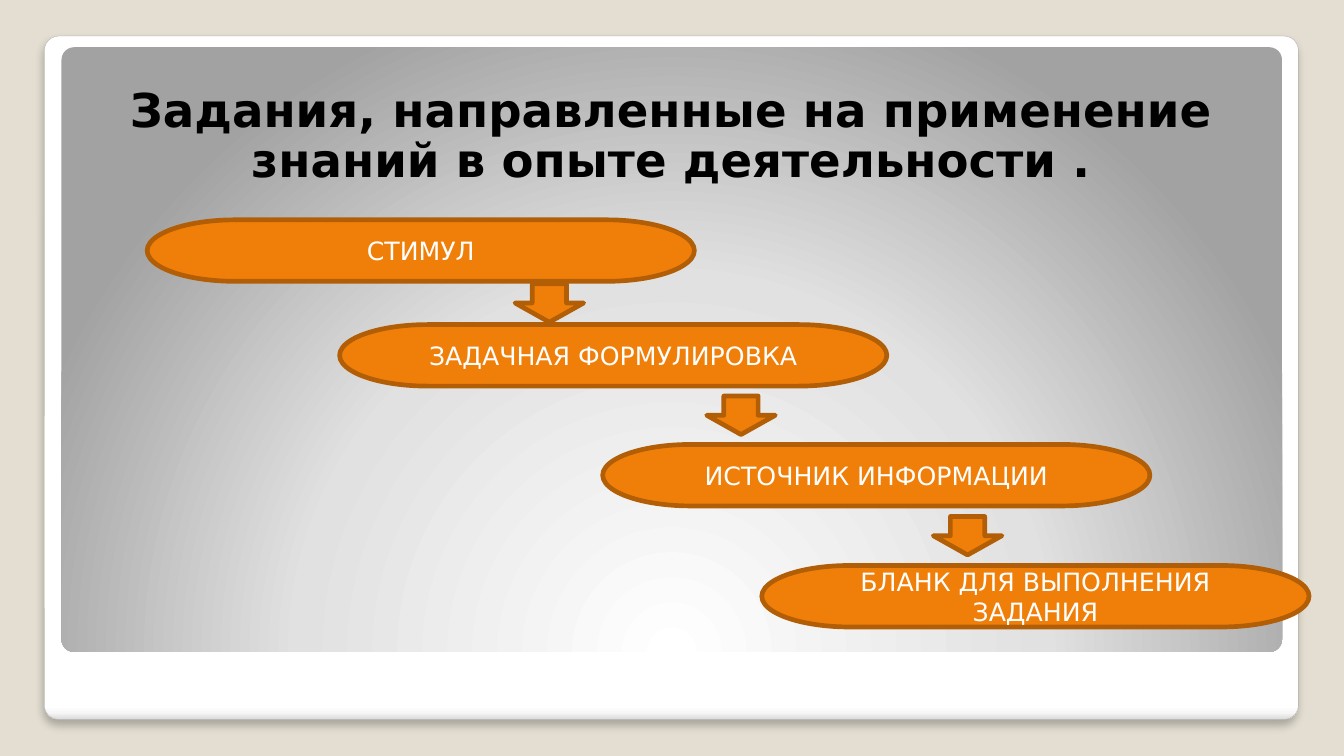
from dataclasses import dataclass

from lxml import etree
from pptx import Presentation
from pptx.dml.color import RGBColor
from pptx.enum.shapes import MSO_SHAPE
from pptx.enum.text import MSO_ANCHOR, PP_ALIGN
from pptx.oxml.ns import qn
from pptx.util import Cm, Pt

ROUNDED = MSO_SHAPE.ROUNDED_RECTANGLE
TERMINATOR = MSO_SHAPE.FLOWCHART_TERMINATOR
DOWN_ARROW = MSO_SHAPE.DOWN_ARROW
MIDDLE = MSO_ANCHOR.MIDDLE
CENTER = PP_ALIGN.CENTER


@dataclass(frozen=True)
class Theme:
    font: str = "DejaVu Sans"
    title_size: float = 33.3
    step_size: float = 18
    outline: float = 3.35
    hairline: float = 0.16
    backdrop: str = "E3DED1"
    card_edge: str = "A4A4A4"
    shadow: str = "000000"
    title: str = "000000"
    step_text: str = "FFFFFF"
    step_fill: str = "F07F09"
    step_line: str = "B25E07"
    card_stops: tuple = ((0, "FFFFFF"), (98, "FFFFFF"), (99, "F7F7F7"), (100, "DADADA"))
    panel_stops: tuple = ((0, "FFFFFF"), (55, "E1E1E1"), (100, "A2A2A2"))


THEME = Theme()

SLIDE_SIZE = (33.87, 19.05)
CARD_BOX = (1.12, 0.91, 31.6, 17.22)
PANEL_BOX = (1.55, 1.19, 30.76, 15.24)
TITLE_BOX = (2.31, 1.63, 29.21, 3.68)
STAIRS_BOX = (3.71, 5.54, 29.28, 10.26)
STEP_SIZE = (13.79, 1.55)
ARROW_SIZE = (1.73, 0.97)
CORNER = 0.021

TITLE = "Задания, направленные на применение знаний в опыте деятельности ."
# Label, then the step's left and top from the corner of the staircase
STEPS = (
    ("СТИМУЛ", 0, 0),
    ("ЗАДАЧНАЯ ФОРМУЛИРОВКА", 4.85, 2.64),
    ("ИСТОЧНИК ИНФОРМАЦИИ", 11.48, 5.66),
    ("БЛАНК ДЛЯ ВЫПОЛНЕНИЯ ЗАДАНИЯ", 15.49, 8.71),
)
# Left of each arrow from the left of the step above it
ARROW_OFFSETS = (9.27, 9.25, 8.33)


def add_shape(slide, kind, box):
    shape = slide.shapes.add_shape(kind, *map(Cm, box))
    shape.shadow.inherit = False
    return shape


def add_rgb(parent, color):
    return etree.SubElement(parent, qn("a:srgbClr"), val=color)


def set_gradient(shape, stops):
    """Give the shape a gradient and return its element, still without direction."""
    gradient = etree.Element(qn("a:gradFill"), rotWithShape="1")
    stop_list = etree.SubElement(gradient, qn("a:gsLst"))
    for percent, color in stops:
        stop = etree.SubElement(stop_list, qn("a:gs"), pos=str(percent * 1000))
        add_rgb(stop, color)
    shape.element.spPr.find(qn("a:prstGeom")).addnext(gradient)
    return gradient


def write(frame, text, size, color, bold=False):
    frame.word_wrap = True
    frame.vertical_anchor = MIDDLE
    paragraph = frame.paragraphs[0]
    paragraph.alignment = CENTER
    run = paragraph.add_run()
    run.text = text
    run.font.name = THEME.font
    run.font.size = Pt(size)
    run.font.bold = bold
    run.font.color.rgb = RGBColor.from_string(color)
    return paragraph


def build_card(slide, box):
    card = add_shape(slide, ROUNDED, box)
    card.adjustments[0] = CORNER
    card.line.color.rgb = RGBColor.from_string(THEME.card_edge)
    card.line.width = Pt(THEME.hairline)
    gradient = set_gradient(card, THEME.card_stops)
    etree.SubElement(gradient, qn("a:lin"), ang="5400000", scaled="0")
    effects = card.element.spPr.find(qn("a:effectLst"))
    shadow = etree.SubElement(
        effects, qn("a:outerShdw"), blurRad=str(Pt(6)), dist=str(Pt(4)),
        dir="5400000", algn="tl", rotWithShape="0")
    etree.SubElement(add_rgb(shadow, THEME.shadow), qn("a:alpha"), val="25000")


def build_panel(slide, box):
    panel = add_shape(slide, ROUNDED, box)
    panel.adjustments[0] = CORNER
    panel.line.fill.background()
    gradient = set_gradient(panel, THEME.panel_stops)
    circle = etree.SubElement(gradient, qn("a:path"), path="circle")
    etree.SubElement(circle, qn("a:fillToRect"),
                     l="50000", t="175000", r="50000", b="-75000")


def build_title(slide, box):
    frame = slide.shapes.add_textbox(*map(Cm, box)).text_frame
    paragraph = write(frame, TITLE, THEME.title_size, THEME.title, bold=True)
    paragraph.line_spacing = 0.9


def add_orange(slide, kind, box):
    shape = add_shape(slide, kind, box)
    shape.fill.solid()
    shape.fill.fore_color.rgb = RGBColor.from_string(THEME.step_fill)
    shape.line.color.rgb = RGBColor.from_string(THEME.step_line)
    shape.line.width = Pt(THEME.outline)
    return shape


def build_stairs(slide, box):
    """Steps going down to the right, an arrow midway in each gap between them."""
    left, top = box[:2]
    for label, dx, dy in STEPS:
        step = add_orange(slide, TERMINATOR, (left + dx, top + dy, *STEP_SIZE))
        write(step.text_frame, label, THEME.step_size, THEME.step_text)

    for upper, lower, offset in zip(STEPS, STEPS[1:], ARROW_OFFSETS):
        gap_middle = top + (upper[2] + STEP_SIZE[1] + lower[2]) / 2
        arrow_top = gap_middle - ARROW_SIZE[1] / 2
        add_orange(slide, DOWN_ARROW, (left + upper[1] + offset, arrow_top, *ARROW_SIZE))


def main():
    deck = Presentation()
    deck.slide_width, deck.slide_height = map(Cm, SLIDE_SIZE)
    slide = deck.slides.add_slide(deck.slide_layouts[6])
    slide.background.fill.solid()
    slide.background.fill.fore_color.rgb = RGBColor.from_string(THEME.backdrop)
    build_card(slide, CARD_BOX)
    build_panel(slide, PANEL_BOX)
    build_title(slide, TITLE_BOX)
    build_stairs(slide, STAIRS_BOX)
    deck.save("out.pptx")


if __name__ == "__main__":
    main()
